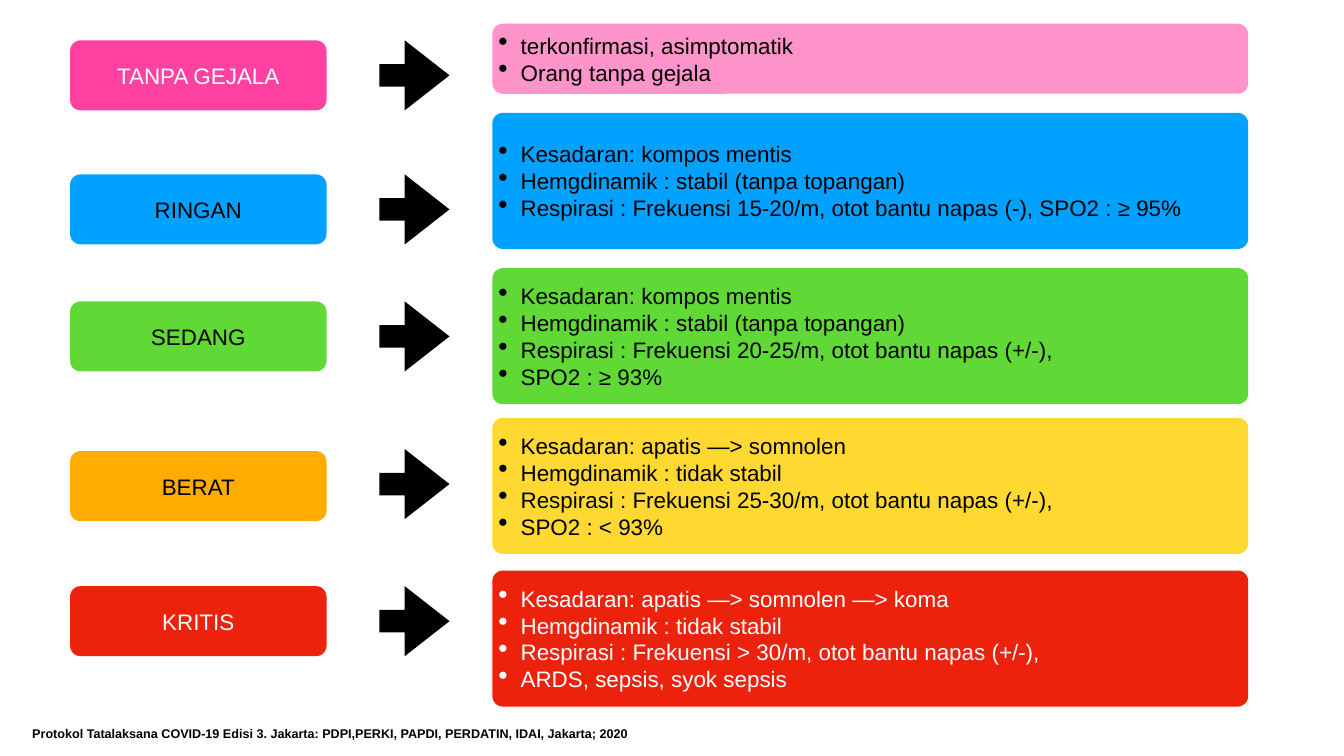
from lxml.etree import SubElement
from pptx import Presentation
from pptx.dml.color import RGBColor
from pptx.enum.shapes import MSO_SHAPE
from pptx.enum.text import MSO_ANCHOR, PP_ALIGN
from pptx.oxml.ns import qn
from pptx.util import Inches, Pt

COLORS = {
    "black": "000000", "white": "FFFFFF", "pink": "FF42A1", "light pink": "FF94CA",
    "blue": "00A1FF", "green": "60D937", "orange": "FEAD00", "yellow": "FFD932",
    "red": "ED220D",
}
FONT = "Arial"
LABEL_X, LABEL_W = 1.39, 5.09
ARROW_X, ROW_H = 7.53, 1.39
DETAIL_X, DETAIL_W = 9.77, 15
CORNER = 0.21

# label, label fill, detail fill, text colour, label top, arrow top, detail top, detail height, lines
LEVELS = [
    ("TANPA GEJALA", "pink", "light pink", "white", "black", 0.8, 0.8, 0.47, 1.39,
     ["terkonfirmasi, asimptomatik", "Orang tanpa gejala"]),
    ("RINGAN", "blue", "blue", "black", "black", 3.46, 3.46, 2.24, 2.7,
     ["Kesadaran: kompos mentis", "Hemgdinamik : stabil (tanpa topangan)",
      "Respirasi : Frekuensi 15-20/m, otot bantu napas (-), SPO2 : ≥ 95%"]),
    ("SEDANG", "green", "green", "black", "black", 5.98, 5.98, 5.32, 2.7,
     ["Kesadaran: kompos mentis", "Hemgdinamik : stabil (tanpa topangan)",
      "Respirasi : Frekuensi 20-25/m, otot bantu napas (+/-),", "SPO2 : ≥ 93%"]),
    ("BERAT", "orange", "yellow", "black", "black", 8.95, 8.91, 8.29, 2.7,
     ["Kesadaran: apatis —> somnolen", "Hemgdinamik : tidak stabil",
      "Respirasi : Frekuensi 25-30/m, otot bantu napas (+/-),", "SPO2 : < 93%"]),
    ("KRITIS", "red", "red", "white", "white", 11.63, 11.63, 11.32, 2.7,
     ["Kesadaran: apatis —> somnolen —> koma", "Hemgdinamik : tidak stabil",
      "Respirasi : Frekuensi > 30/m, otot bantu napas (+/-),",
      "ARDS, sepsis, syok sepsis"]),
]


def rgb(name):
    return RGBColor.from_string(COLORS[name])


def add_block(slide, kind, box, fill, adjustments):
    sp = slide.shapes.add_shape(kind, *map(Inches, box))
    sp.shadow.inherit = False
    sp.fill.solid()
    sp.fill.fore_color.rgb = rgb(fill)
    sp.line.fill.background()
    for i, value in enumerate(adjustments):
        sp.adjustments[i] = value
    return sp


def set_frame(tf, inset, anchor):
    tf.word_wrap = True
    tf.vertical_anchor = anchor
    tf.margin_left = tf.margin_right = tf.margin_top = tf.margin_bottom = Inches(inset)


def add_bullet(p):
    pPr = p._p.get_or_add_pPr()
    pPr.set("marL", str(Inches(0.44)))
    pPr.set("indent", str(-Inches(0.44)))
    SubElement(pPr, qn("a:buSzPct")).set("val", "123000")
    SubElement(pPr, qn("a:buChar")).set("char", "•")


def write_lines(tf, lines, size, color, align=PP_ALIGN.LEFT, bold=False, bullets=False):
    for i, line in enumerate(lines):
        p = tf.add_paragraph() if i else tf.paragraphs[0]
        p.alignment = align
        if bullets:
            add_bullet(p)
        r = p.add_run()
        r.text = line
        r.font.name = FONT
        r.font.size = Pt(size)
        r.font.bold = bold
        r.font.color.rgb = rgb(color)


def add_card(slide, box, fill, lines, color, align=PP_ALIGN.LEFT, bullets=False):
    sp = add_block(slide, MSO_SHAPE.ROUNDED_RECTANGLE, box, fill, [CORNER / box[3]])
    set_frame(sp.text_frame, 0.06, MSO_ANCHOR.MIDDLE)
    write_lines(sp.text_frame, lines, 32, color, align, bullets=bullets)


def add_level(slide, level):
    (label, label_fill, detail_fill, label_color, detail_color,
     label_y, arrow_y, detail_y, detail_h, lines) = level
    add_card(slide, (LABEL_X, label_y, LABEL_W, ROW_H), label_fill, [label],
             label_color, PP_ALIGN.CENTER)
    add_block(slide, MSO_SHAPE.RIGHT_ARROW, (ARROW_X, arrow_y, ROW_H, ROW_H),
              "black", [0.32, 0.64])
    add_card(slide, (DETAIL_X, detail_y, DETAIL_W, detail_h), detail_fill, lines,
             detail_color, bullets=True)


def add_source(slide, text):
    tf = slide.shapes.add_textbox(*map(Inches, (0.59, 14.35, 24.03, 0.45))).text_frame
    set_frame(tf, 0.05, MSO_ANCHOR.TOP)
    write_lines(tf, [text], 18, "black", bold=True)


def main():
    prs = Presentation()
    prs.slide_width, prs.slide_height = Inches(26.67), Inches(15)
    slide = prs.slides.add_slide(prs.slide_layouts[6])
    for level in LEVELS:
        add_level(slide, level)
    add_source(slide, "Protokol Tatalaksana COVID-19 Edisi 3. Jakarta: "
                      "PDPI,PERKI, PAPDI, PERDATIN, IDAI, Jakarta; 2020")
    prs.save("out.pptx")


if __name__ == "__main__":
    main()
